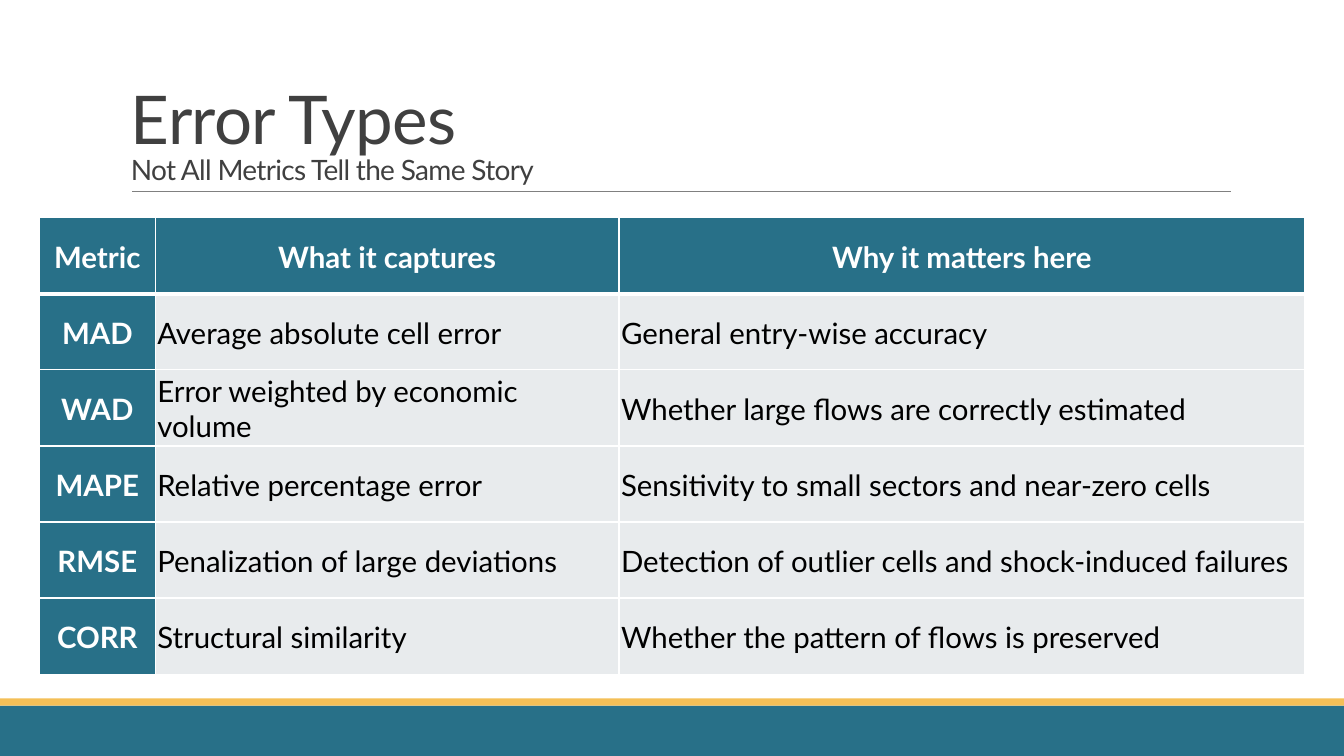
from typing import NamedTuple

from lxml.etree import SubElement
from pptx import Presentation
from pptx.dml.color import RGBColor
from pptx.enum.shapes import MSO_CONNECTOR, MSO_SHAPE
from pptx.enum.text import MSO_ANCHOR, PP_ALIGN
from pptx.oxml import parse_xml
from pptx.oxml.ns import nsdecls, qn
from pptx.slide import Slide
from pptx.table import _Cell as Cell
from pptx.util import Inches, Pt

TEAL = RGBColor(0x28, 0x70, 0x88)
GOLD = RGBColor(0xF4, 0xBF, 0x57)
GRAY = RGBColor(0x80, 0x80, 0x80)
DARK = RGBColor(0x40, 0x40, 0x40)
PALE = RGBColor(0xE8, 0xEB, 0xED)
WHITE = RGBColor(0xFF, 0xFF, 0xFF)
BLACK = RGBColor(0x00, 0x00, 0x00)
FONT = "Lato"
SLIDE_WIDTH, SLIDE_HEIGHT = 13.33, 7.5


class Band(NamedTuple):
    top: float
    height: float
    color: RGBColor


class Metric(NamedTuple):
    name: str
    captures: str
    matters: str


class TitleLine(NamedTuple):
    text: str
    size: int


BANDS = [Band(7, 0.5, TEAL), Band(6.93, 0.07, GOLD)]
TITLE_LINES = [
    TitleLine("Error Types", 48),
    TitleLine("Not All Metrics Tell the Same Story", 20),
]
METRICS = [
    Metric("Metric", "What it captures", "Why it matters here"),
    Metric("MAD", "Average absolute cell error", "General entry-wise accuracy"),
    Metric("WAD", "Error weighted by economic volume",
           "Whether large flows are correctly estimated"),
    Metric("MAPE", "Relative percentage error",
           "Sensitivity to small sectors and near-zero cells"),
    Metric("RMSE", "Penalization of large deviations",
           "Detection of outlier cells and shock-induced failures"),
    Metric("CORR", "Structural similarity",
           "Whether the pattern of flows is preserved"),
]
COLUMN_WIDTHS = [1.15, 4.6, 6.8]
TABLE_LEFT, TABLE_TOP, TABLE_HEIGHT = 0.39, 2.16, 4.53


def add_band(slide: Slide, band: Band) -> None:
    bar = slide.shapes.add_shape(
        MSO_SHAPE.RECTANGLE, 0, Inches(band.top), Inches(SLIDE_WIDTH), Inches(band.height))
    bar.shadow.inherit = False
    bar.fill.solid()
    bar.fill.fore_color.rgb = band.color
    bar.line.fill.background()


def add_title_rule(slide: Slide) -> None:
    rule = slide.shapes.add_connector(
        MSO_CONNECTOR.STRAIGHT, Inches(1.31), Inches(1.9), Inches(12.21), Inches(1.9))
    rule.line.color.rgb = GRAY
    rule.line.width = Pt(0.5)
    SubElement(rule._element.spPr, qn("a:effectLst"))


def add_title(slide: Slide) -> None:
    frame = slide.shapes.add_textbox(
        Inches(1.2), Inches(0.31), Inches(11), Inches(1.59)).text_frame
    frame.word_wrap = True
    frame.vertical_anchor = MSO_ANCHOR.BOTTOM
    heading = frame.paragraphs[0]
    heading.line_spacing = 0.85
    heading.font.name = FONT
    heading.font.color.rgb = DARK
    for index, line in enumerate(TITLE_LINES):
        if index:
            heading.add_line_break()
        run = heading.add_run()
        run.text = line.text
        run.font.size = Pt(line.size)
        run._r.get_or_add_rPr().set("spc", "-50")


def add_borders(cell: Cell, above: float, below: float) -> None:
    """Draw white borders; the left and right ones are 1 pt wide."""
    properties = cell._tc.get_or_add_tcPr()
    widths = {"lnL": 1, "lnR": 1, "lnT": above, "lnB": below}
    for position, (side, width) in enumerate(widths.items()):
        properties.insert(position, parse_xml(
            f'<a:{side} {nsdecls("a")} w="{Pt(width)}"><a:solidFill>'
            f'<a:srgbClr val="{WHITE}"/></a:solidFill></a:{side}>'))


def fill_cell(cell: Cell, text: str, is_heading: bool) -> None:
    cell.text = text
    cell.vertical_anchor = MSO_ANCHOR.MIDDLE
    cell.margin_left = cell.margin_top = cell.margin_right = Inches(0.02)
    cell.margin_bottom = 0
    cell.fill.solid()
    cell.fill.fore_color.rgb = TEAL if is_heading else PALE
    entry = cell.text_frame.paragraphs[0]
    entry.alignment = PP_ALIGN.CENTER if is_heading else PP_ALIGN.LEFT
    entry.font.name = FONT
    entry.font.size = Pt(21)
    entry.font.bold = is_heading
    entry.font.color.rgb = WHITE if is_heading else BLACK


def add_metrics_table(slide: Slide) -> None:
    table = slide.shapes.add_table(
        len(METRICS), len(COLUMN_WIDTHS), Inches(TABLE_LEFT), Inches(TABLE_TOP),
        Inches(sum(COLUMN_WIDTHS)), Inches(TABLE_HEIGHT)).table
    table.horz_banding = False
    table.first_col = True
    for column, width in zip(table.columns, COLUMN_WIDTHS):
        column.width = Inches(width)
    for r, metric in enumerate(METRICS):
        for c, text in enumerate(metric):
            cell = table.cell(r, c)
            fill_cell(cell, text, is_heading=r == 0 or c == 0)
            add_borders(cell, above=3 if r == 1 else 1, below=3 if r == 0 else 1)


def main() -> None:
    deck = Presentation()
    deck.slide_width = Inches(SLIDE_WIDTH)
    deck.slide_height = Inches(SLIDE_HEIGHT)
    slide = deck.slides.add_slide(deck.slide_layouts[6])
    for band in BANDS:
        add_band(slide, band)
    add_title_rule(slide)
    add_title(slide)
    add_metrics_table(slide)
    deck.save("out.pptx")


if __name__ == "__main__":
    main()
